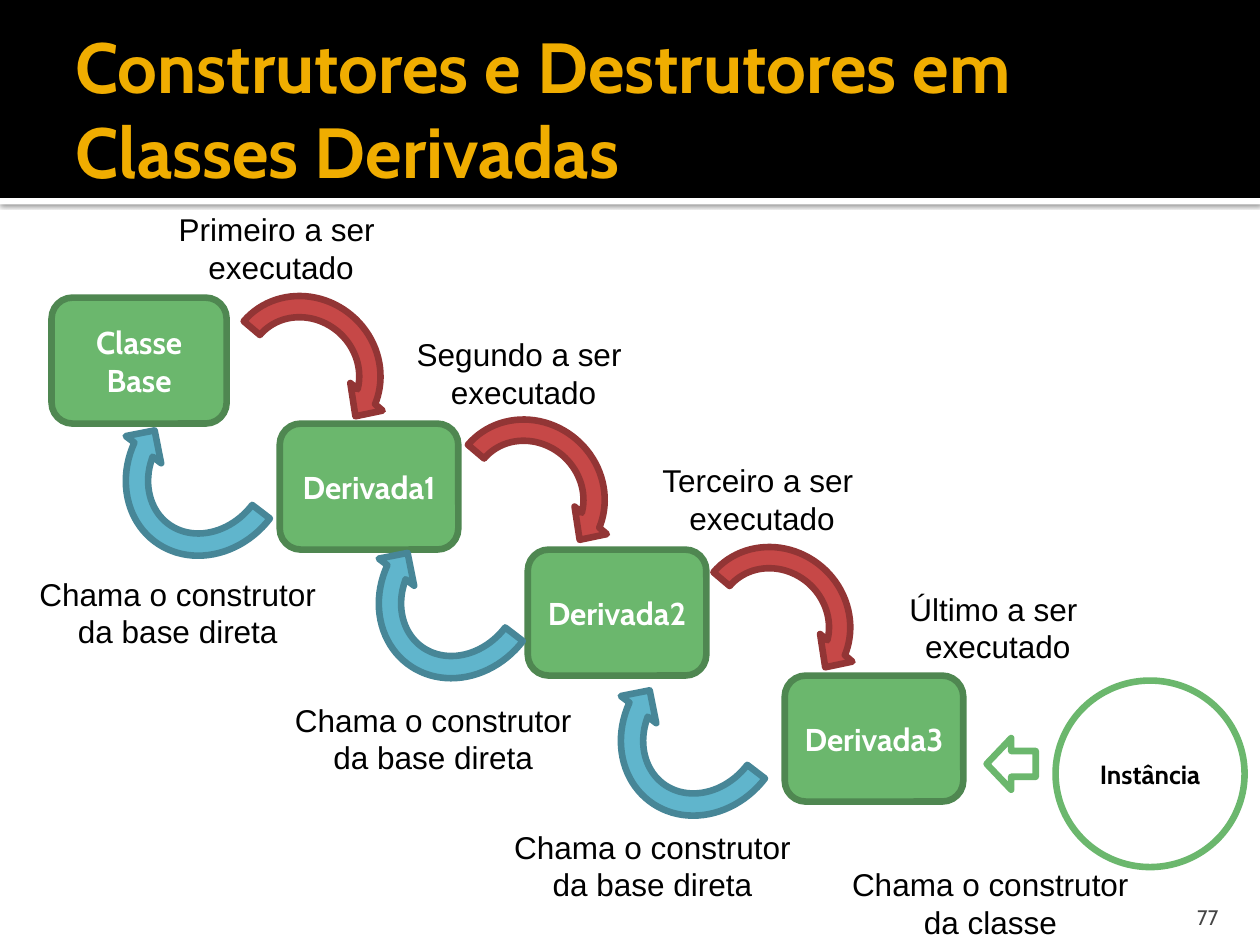
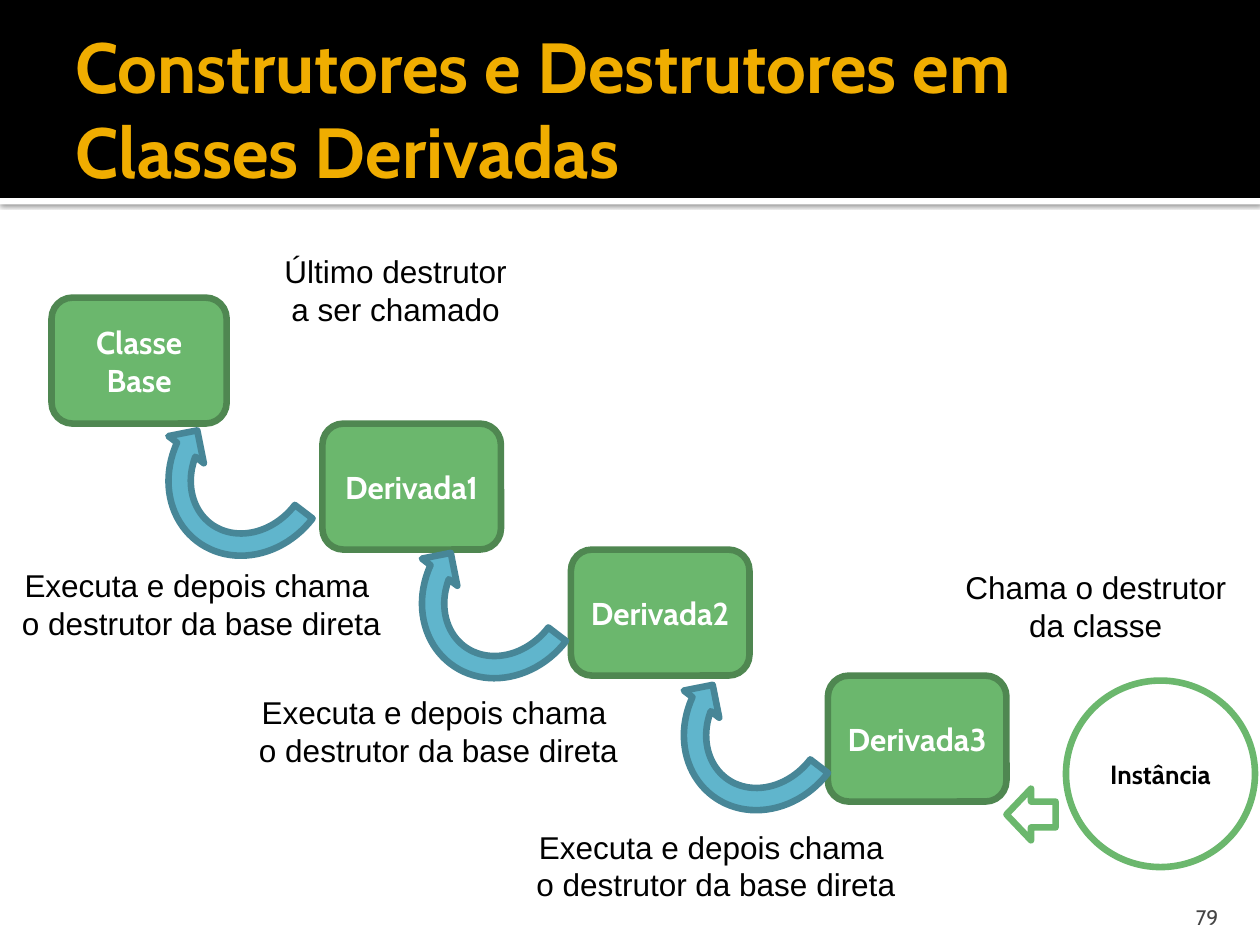
from dataclasses import dataclass

from lxml.etree import SubElement
from pptx import Presentation
from pptx.dml.color import RGBColor
from pptx.enum.shapes import MSO_SHAPE
from pptx.enum.text import MSO_ANCHOR, MSO_AUTO_SIZE, PP_ALIGN
from pptx.oxml.ns import qn
from pptx.util import Cm, Pt


@dataclass(frozen=True)
class Theme:
    heading_font: str = "Cabin"
    label_font: str = "Arial"
    black: str = "000000"
    white: str = "FFFFFF"
    gold: str = "F0AD00"
    gray: str = "454545"
    green: str = "6BB76D"
    dark_green: str = "4F8751"
    blue: str = "60B5CC"
    dark_blue: str = "478697"
    red: str = "C64847"
    dark_red: str = "923535"
    title_size: float = 40.5
    body_size: float = 18
    instance_size: float = 15
    number_size: float = 12
    outline: float = 3.78


TITLE = "Construtores e Destrutores em Classes Derivadas"
CLASSES = ["Classe\nBase", "Derivada1", "Derivada2", "Derivada3"]
BASE_LEFT, BASE_WIDTH = 1.04, 3.53
FIRST_CLASS_TOP, CLASS_STEP, CLASS_HEIGHT = 6, 2.54, 2.54
ARROW_WIDTH = 3.6
DERIVED_WIDTH = 3.6
LABEL_HEIGHT = 1.8


class Deck:
    def __init__(self, theme):
        self.theme = theme
        self.presentation = Presentation()
        self.presentation.slide_width = Cm(25.4)
        self.presentation.slide_height = Cm(19.05)
        self.slide = None

    def new_slide(self, number):
        theme = self.theme
        self.slide = self.presentation.slides.add_slide(self.presentation.slide_layouts[6])
        rule = self.shape(MSO_SHAPE.RECTANGLE, (0, 3.99, 25.4, 0.13), theme.white)
        self.cast_shadow(rule)
        self.shape(MSO_SHAPE.RECTANGLE, (0, 0, 25.4, 3.99), theme.black)
        title = self.text_box((1.27, 0.43, 21.92, 3.48), MSO_ANCHOR.MIDDLE)
        title.margin_right = Cm(0.13)
        self.set_text(title, TITLE, theme.title_size, theme.gold, bold=True, align=PP_ALIGN.LEFT)
        page = self.text_box((22.78, 17.98, 2.03, 0.76), MSO_ANCHOR.BOTTOM)
        page.margin_bottom = 0
        self.set_text(page, str(number), theme.number_size, theme.gray, align=PP_ALIGN.RIGHT)

    def shape(self, kind, box, fill, line=None, rotation=0):
        shape = self.slide.shapes.add_shape(kind, *map(Cm, box))
        shape.shadow.inherit = False
        shape.rotation = rotation
        shape.fill.solid()
        shape.fill.fore_color.rgb = RGBColor.from_string(fill)
        if line:
            shape.line.color.rgb = RGBColor.from_string(line)
            shape.line.width = Pt(self.theme.outline)
        else:
            shape.line.fill.background()
        return shape

    def cast_shadow(self, shape):
        effects = shape.element.spPr.find(qn("a:effectLst"))
        shadow = SubElement(effects, qn("a:outerShdw"), blurRad=str(Pt(2.5)),
                            dist=str(Pt(0.8)), dir="5400000", rotWithShape="0")
        color = SubElement(shadow, qn("a:srgbClr"), val=self.theme.black)
        SubElement(color, qn("a:alpha"), val="60000")

    def text_box(self, box, anchor=MSO_ANCHOR.TOP):
        frame = self.slide.shapes.add_textbox(*map(Cm, box)).text_frame
        frame.word_wrap = True
        frame.vertical_anchor = anchor
        return frame

    def set_text(self, frame, text, size, color, bold=False, font=None, align=PP_ALIGN.CENTER):
        frame.text = text
        for paragraph in frame.paragraphs:
            paragraph.alignment = align
            for run in paragraph.runs:
                run.font.name = font or self.theme.heading_font
                run.font.size = Pt(size)
                run.font.bold = bold
                run.font.color.rgb = RGBColor.from_string(color)

    def label(self, text, left, top, width):
        frame = self.text_box((left, top, width, LABEL_HEIGHT))
        frame.word_wrap = False
        frame.auto_size = MSO_AUTO_SIZE.SHAPE_TO_FIT_TEXT
        self.set_text(frame, text, self.theme.body_size, self.theme.black,
                      font=self.theme.label_font)

    def hierarchy(self, derived_lefts):
        theme = self.theme
        columns = [(BASE_LEFT, BASE_WIDTH)] + [(left, DERIVED_WIDTH) for left in derived_lefts]
        for level, (name, (left, width)) in enumerate(zip(CLASSES, columns)):
            box = (left, FIRST_CLASS_TOP + level * CLASS_STEP, width, CLASS_HEIGHT)
            node = self.shape(MSO_SHAPE.ROUNDED_RECTANGLE, box, theme.green, theme.dark_green)
            node.text_frame.vertical_anchor = MSO_ANCHOR.MIDDLE
            self.set_text(node.text_frame, name, theme.body_size, theme.white, bold=True)

    def calls_to_base(self, positions):
        for left, top in positions:
            self.shape(MSO_SHAPE.CIRCULAR_ARROW, (left, top, ARROW_WIDTH, 4.01),
                       self.theme.blue, self.theme.dark_blue, 217.4)

    def returns_to_derived(self, positions):
        for left, top in positions:
            self.shape(MSO_SHAPE.CIRCULAR_ARROW, (left, top, ARROW_WIDTH, 3.43),
                       self.theme.red, self.theme.dark_red, 40.4)

    def instance(self, left, arrow_left, arrow_top):
        theme = self.theme
        circle = self.shape(MSO_SHAPE.OVAL, (left, 13.72, 3.81, 3.76), theme.white, theme.green)
        circle.text_frame.vertical_anchor = MSO_ANCHOR.MIDDLE
        self.set_text(circle.text_frame, "Instância", theme.instance_size, theme.black, bold=True)
        self.shape(MSO_SHAPE.LEFT_ARROW, (arrow_left, arrow_top, 0.99, 1.04),
                   theme.white, theme.green)


def constructors(deck):
    deck.new_slide(77)
    deck.hierarchy([5.64, 10.64, 15.82])
    deck.calls_to_base([(12.37, 12.73), (7.49, 9.96), (2.39, 7.49)])
    deck.returns_to_derived([(4.32, 5.79), (8.84, 8.28), (13.79, 10.85)])
    for left, top in [(10.08, 16.56), (5.66, 14), (0.51, 11.46)]:
        deck.label("Chama o construtor\nda base direta", left, top, 6.15)
    for order, left, top, width in [
        ("Primeiro", 3.33, 4.11, 4.67),
        ("Segundo", 8.13, 6.63, 4.85),
        ("Terceiro", 13.08, 9.17, 4.57),
        ("Último", 18.06, 11.76, 4.11),
    ]:
        deck.label(f"{order} a ser \nexecutado", left, top, width)
    deck.label("Chama o construtor\nda classe", 16.89, 17.32, 6.15)
    deck.instance(21.28, 19.89, 14.88)


def destructors(deck):
    deck.new_slide(79)
    deck.hierarchy([6.5, 11.51, 16.69])
    deck.calls_to_base([(13.64, 12.62), (8.36, 9.96), (3.25, 7.49)])
    for left, top in [(10.52, 16.56), (4.93, 13.84), (0.15, 11.28)]:
        deck.label("Executa e depois chama \no destrutor da base direta", left, top, 7.82)
    deck.label("Chama o destrutor\nda classe", 19.18, 11.33, 5.82)
    deck.label("Último destrutor\na ser chamado", 5.46, 4.95, 5.03)
    deck.instance(21.49, 20.29, 15.9)


def main():
    deck = Deck(Theme())
    constructors(deck)
    destructors(deck)
    deck.presentation.save("out.pptx")


if __name__ == "__main__":
    main()
